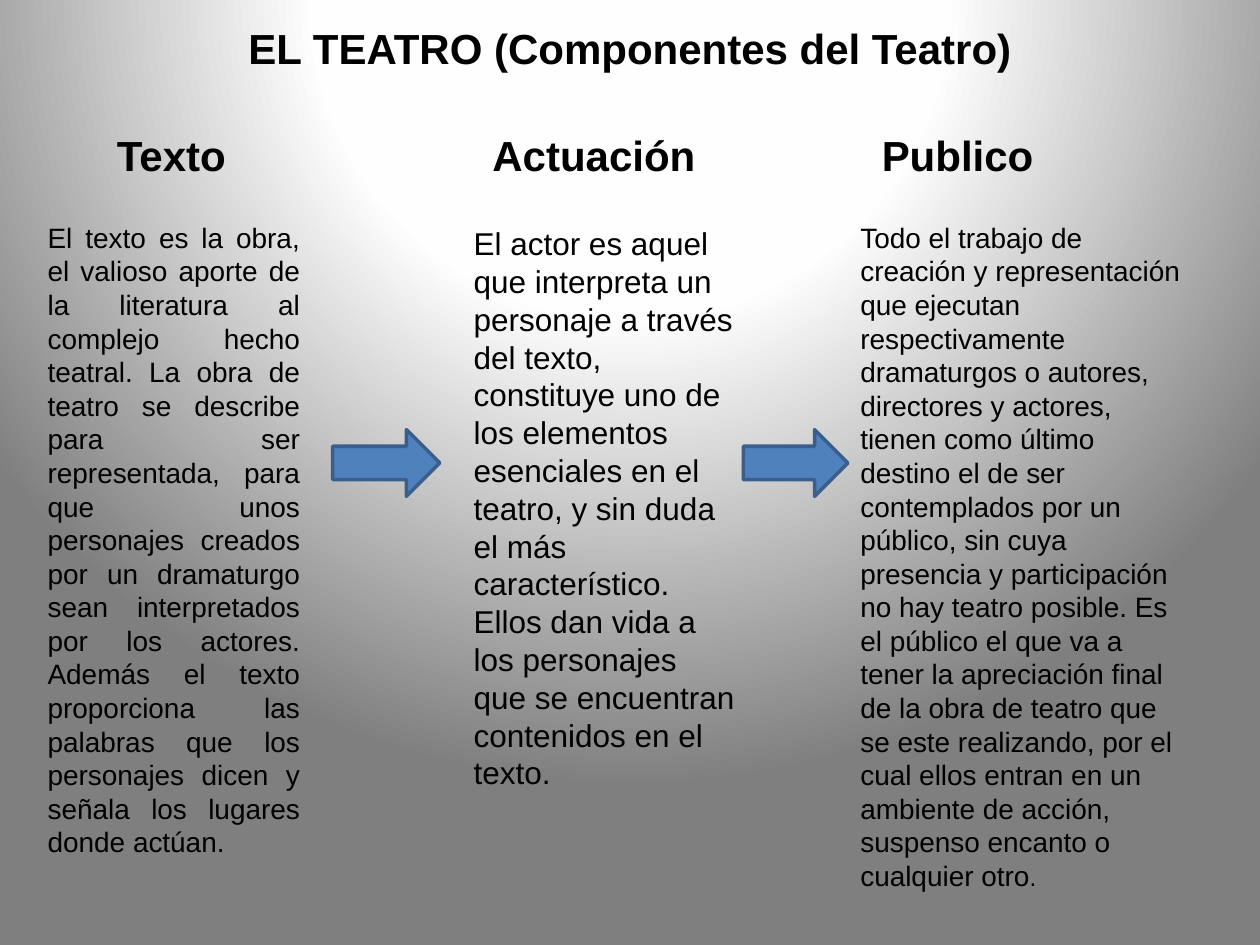
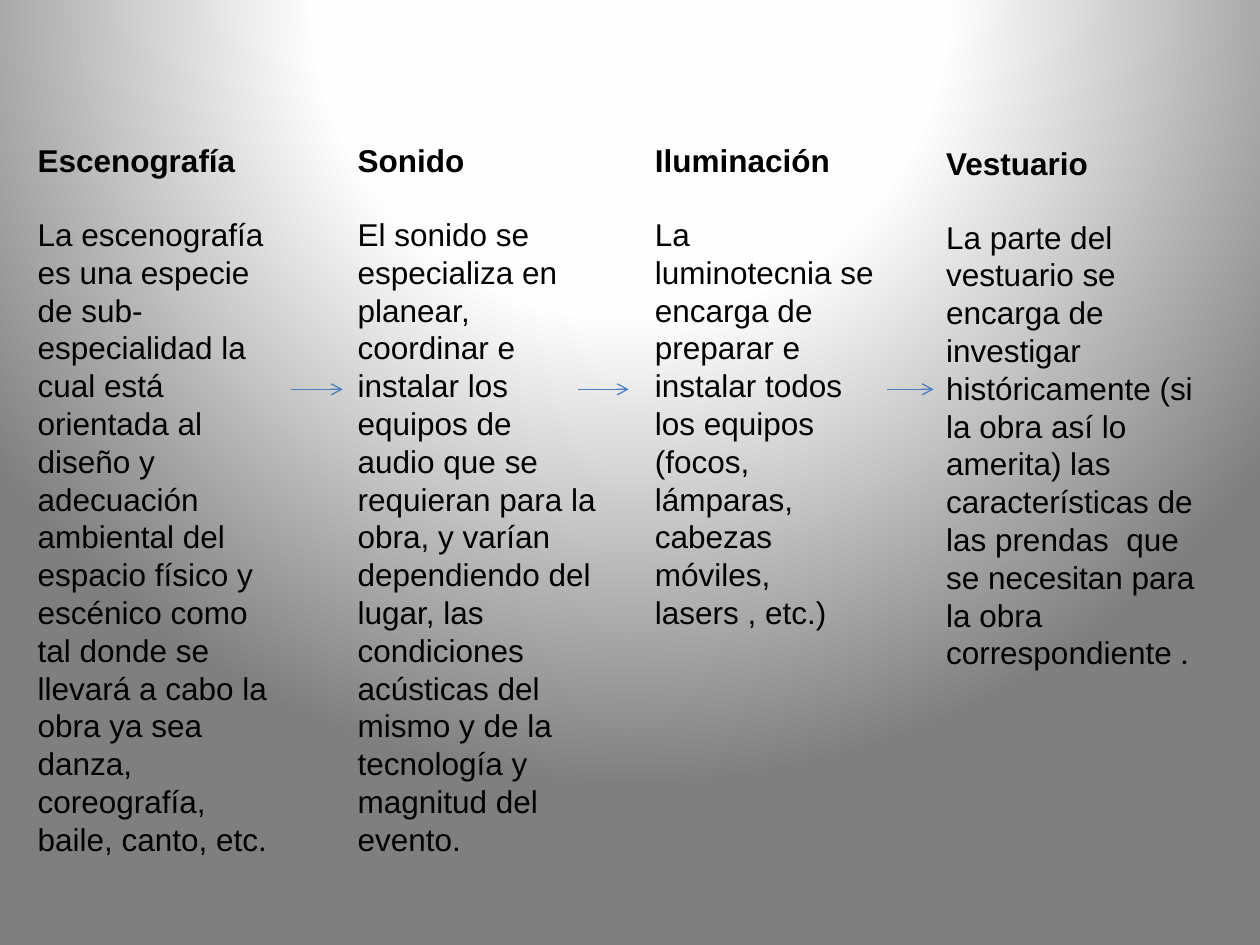
import dataclasses

import lxml.etree
import pptx
import pptx.dml.color
import pptx.enum.shapes
import pptx.enum.text
import pptx.oxml
import pptx.oxml.ns
import pptx.util

Inches = pptx.util.Inches
Align = pptx.enum.text.PP_ALIGN
qn = pptx.oxml.ns.qn


@dataclasses.dataclass(frozen=True)
class Theme:
    font: str = "Arial"
    period_font: str = "Calibri"
    text: str = "000000"
    arrow_fill: str = "4F81BD"
    arrow_outline: str = "3A5F8C"
    connector: str = "4B7EBC"
    background: tuple = ((0, "FFFFFF"), (40, "FEFEFE"), (100, "7F7F7F"))
    title_size: int = 24
    body_size: int = 18
    compact_size: int = 16
    period_size: int = 14
    title_gap: float = 32.2
    heading_gap: float = 20.7


THEME = Theme()

TITLE = "EL TEATRO (Componentes del Teatro)"
COMPONENT_HEADINGS = ("Texto", "Actuación", "Publico")
HEADING_TABS = (0.83, 3.81, 6.9)

TEXT_COMPONENT = (
    "El texto es la obra, el valioso aporte de la literatura al complejo hecho teatral. "
    "La obra de teatro se describe para ser representada, para que unos personajes creados "
    "por un dramaturgo sean interpretados por los actores. Además el texto proporciona las "
    "palabras que los personajes dicen y señala los lugares donde actúan."
)
ACTING_COMPONENT = (
    "El actor es aquel que interpreta un personaje a través del texto, constituye uno de los "
    "elementos esenciales en el teatro, y sin duda el más característico. Ellos dan vida a "
    "los personajes que se encuentran contenidos en el texto."
)
AUDIENCE_COMPONENT = (
    "Todo el trabajo de creación y representación que ejecutan respectivamente dramaturgos o "
    "autores, directores y actores, tienen como último destino el de ser contemplados por un "
    "público, sin cuya presencia y participación no hay teatro posible. Es el público el que "
    "va a tener la apreciación final de la obra de teatro que se este realizando, por el cual "
    "ellos entran en un ambiente de acción, suspenso encanto o cualquier otro"
)

# Heading, box (left, top, width, height) and body of each production area
PRODUCTION_AREAS = (
    ("Escenografía", (0.2, 1.07, 2.11, 5.86),
     "La escenografía es una especie de sub-especialidad la cual está orientada al diseño y "
     "adecuación ambiental del espacio físico y escénico como tal donde se llevará a cabo la "
     "obra ya sea danza, coreografía, baile, canto, etc."),
    ("Sonido", (2.74, 1.07, 2.09, 5.86),
     "El sonido se especializa en planear, coordinar e instalar los equipos de audio que se "
     "requieran para la obra, y varían dependiendo del lugar, las condiciones acústicas del "
     "mismo y de la tecnología y magnitud del evento."),
    ("Iluminación", (5.1, 1.07, 1.94, 4.04),
     "La luminotecnia se encarga de preparar e instalar todos los equipos (focos, lámparas, "
     "cabezas móviles, lasers , etc.)"),
    ("Vestuario", (7.41, 1.09, 2.21, 4.34),
     "La parte del vestuario se encarga de investigar históricamente (si la obra así lo "
     "amerita) las características de las prendas  que se necesitan para la obra "
     "correspondiente "),
)
AREA_ARROWS = ((2.31, 2.72), (4.59, 4.99), (7.04, 7.41))
AREA_ARROW_Y = 3.09


def color(value):
    return pptx.dml.color.RGBColor.from_string(value)


def set_background(slide):
    """Fill the slide with the theme's circular gradient, centred above the top edge."""
    slide.background.fill.solid()
    solid = slide.element.find(f".//{qn('p:bgPr')}/{qn('a:solidFill')}")
    stops = "".join(
        f'<a:gs pos="{position * 1000}"><a:srgbClr val="{value}"/></a:gs>'
        for position, value in THEME.background
    )
    gradient = pptx.oxml.parse_xml(
        f'<a:gradFill {pptx.oxml.ns.nsdecls("a")} rotWithShape="1"><a:gsLst>{stops}</a:gsLst>'
        '<a:path path="circle"><a:fillToRect l="50000" t="-80000" r="50000" b="180000"/>'
        "</a:path></a:gradFill>"
    )
    solid.getparent().replace(solid, gradient)


def add_slide(presentation):
    slide = presentation.slides.add_slide(presentation.slide_layouts[6])
    set_background(slide)
    return slide


def add_text_box(slide, box):
    frame = slide.shapes.add_textbox(*map(Inches, box)).text_frame
    frame.word_wrap = True
    frame.auto_size = pptx.enum.text.MSO_AUTO_SIZE.SHAPE_TO_FIT_TEXT
    return frame


def add_text(paragraph, text, size=THEME.body_size, bold=False, font=THEME.font,
             align=Align.LEFT):
    paragraph.alignment = align
    run = paragraph.add_run()
    run.text = text
    run.font.size = pptx.util.Pt(size)
    run.font.bold = bold
    run.font.name = font
    run.font.color.rgb = color(THEME.text)


def add_paragraph(frame, gap):
    paragraph = frame.add_paragraph()
    paragraph.space_before = pptx.util.Pt(gap)
    return paragraph


def set_tabs(paragraph, positions):
    properties = paragraph.alignment is not None and paragraph._p.pPr
    tabs = lxml.etree.SubElement(properties, qn("a:tabLst"))
    for position in positions:
        lxml.etree.SubElement(tabs, qn("a:tab"), pos=str(Inches(position)), algn="l")


def add_title_block(slide):
    frame = add_text_box(slide, (0, 0.13, 10, 1.38))
    add_text(frame.paragraphs[0], TITLE, size=THEME.title_size, bold=True, align=Align.CENTER)
    headings = add_paragraph(frame, THEME.title_gap)
    tabbed = "".join(f"\t{heading}" for heading in COMPONENT_HEADINGS)
    add_text(headings, tabbed, size=THEME.title_size, bold=True)
    set_tabs(headings, HEADING_TABS)


def add_body(slide, box, text, **text_format):
    paragraph = add_text_box(slide, box).paragraphs[0]
    add_text(paragraph, text, **text_format)
    return paragraph


def add_production_area(slide, heading, box, body):
    frame = add_text_box(slide, box)
    add_text(frame.paragraphs[0], heading, bold=True)
    paragraph = add_paragraph(frame, THEME.heading_gap)
    add_text(paragraph, body)
    return paragraph


def add_block_arrow(slide, left, width):
    arrow = slide.shapes.add_shape(
        pptx.enum.shapes.MSO_SHAPE.RIGHT_ARROW,
        Inches(left), Inches(3.41), Inches(width), Inches(0.53),
    )
    arrow.shadow.inherit = False
    arrow.fill.solid()
    arrow.fill.fore_color.rgb = color(THEME.arrow_fill)
    arrow.line.color.rgb = color(THEME.arrow_outline)
    arrow.line.width = pptx.util.Pt(2)


def add_line_arrow(slide, start, end, y):
    connector = slide.shapes.add_connector(
        pptx.enum.shapes.MSO_CONNECTOR.STRAIGHT,
        Inches(start), Inches(y), Inches(end), Inches(y),
    )
    connector.line.color.rgb = color(THEME.connector)
    connector.line.width = pptx.util.Pt(0.75)
    properties = connector.element.spPr
    lxml.etree.SubElement(properties.find(qn("a:ln")), qn("a:tailEnd"), type="arrow")
    lxml.etree.SubElement(properties, qn("a:effectLst"))


def build_components_slide(presentation):
    slide = add_slide(presentation)
    add_title_block(slide)
    add_body(slide, (0.28, 1.7, 2.2, 5.22), TEXT_COMPONENT,
             size=THEME.compact_size, align=Align.JUSTIFY)
    add_body(slide, (3.66, 1.73, 2.29, 4.64), ACTING_COMPONENT)
    audience = add_body(slide, (6.73, 1.7, 2.76, 5.51), AUDIENCE_COMPONENT,
                        size=THEME.compact_size)
    add_text(audience, ".", size=THEME.period_size)
    add_block_arrow(slide, 2.64, 0.85)
    add_block_arrow(slide, 5.9, 0.83)


def build_production_slide(presentation):
    slide = add_slide(presentation)
    for heading, box, body in PRODUCTION_AREAS:
        paragraph = add_production_area(slide, heading, box, body)
    add_text(paragraph, ".", font=THEME.period_font)
    for start, end in AREA_ARROWS:
        add_line_arrow(slide, start, end, AREA_ARROW_Y)


def main():
    presentation = pptx.Presentation()
    presentation.slide_width = Inches(10)
    presentation.slide_height = Inches(7.5)
    build_components_slide(presentation)
    build_production_slide(presentation)
    presentation.save("out.pptx")


if __name__ == "__main__":
    main()
